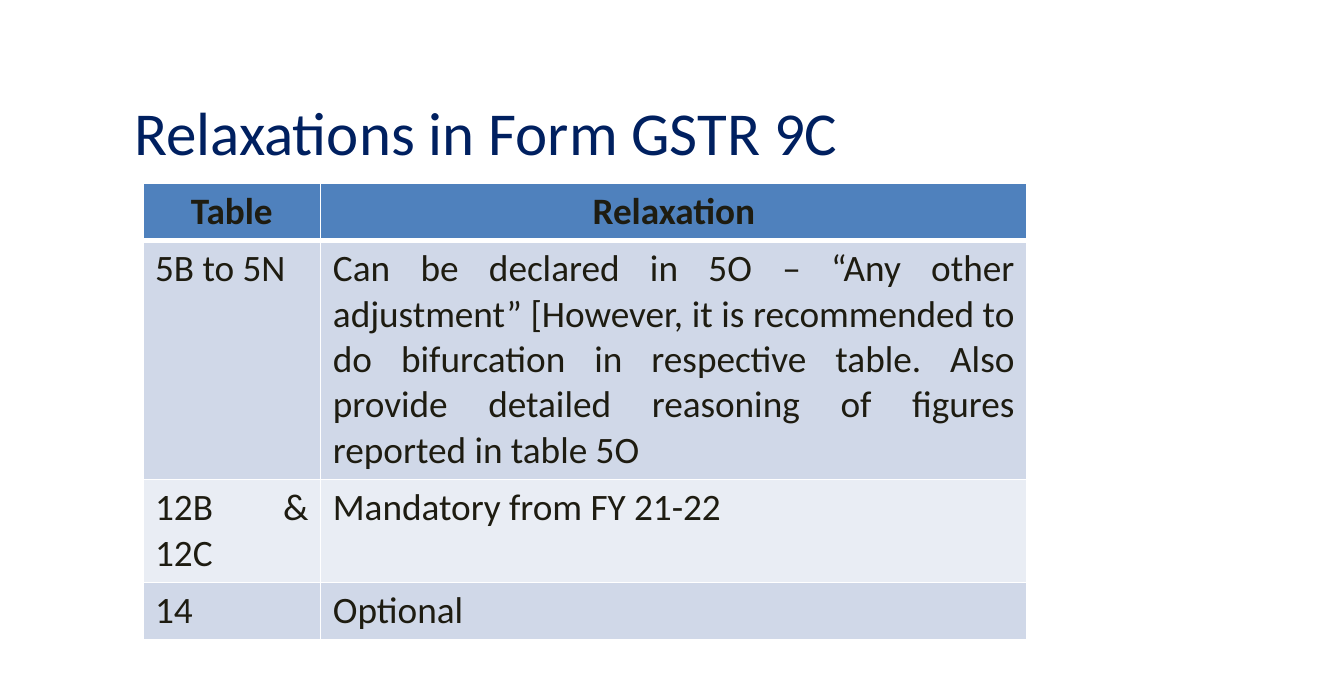
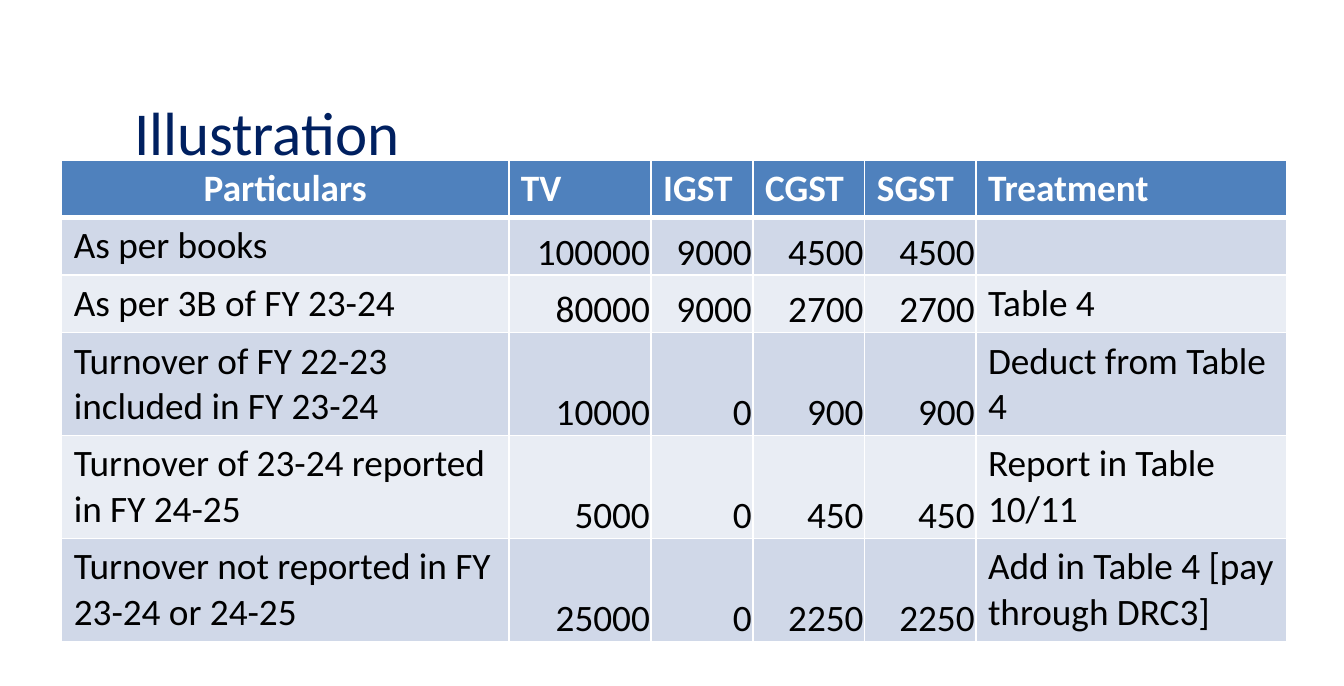
from lxml import etree
from pptx import Presentation
from pptx.dml.color import RGBColor
from pptx.enum import text
from pptx.oxml import ns
from pptx.util import Pt

FONT = "Calibri"
NAVY, WHITE, BLACK, INK = "002060", "FFFFFF", "000000", "1E1C11"
HEADER_FILL, BAND_FILLS = "4F81BD", ("D0D8E8", "E9EDF4")
TITLE_SIZE, TABLE_SIZE = 36, 22
LINE_HEIGHT, CELL_PADDING = 26.7, 7.2
THIN, THICK = 1, 3

LEFT, CENTER = text.PP_ALIGN.LEFT, text.PP_ALIGN.CENTER
RIGHT, JUSTIFY = text.PP_ALIGN.RIGHT, text.PP_ALIGN.JUSTIFY

SLIDES = [
    {
        "title": "Relaxations in Form GSTR 9C",
        "left": 84.4, "top": 108,
        "widths": [105, 417],
        "lines": [1, 5, 2, 1],
        "header_color": INK, "body_color": INK,
        "header_aligns": [CENTER, CENTER],
        "body_aligns": [JUSTIFY, JUSTIFY],
        "rows": [
            ("Table", "Relaxation"),
            ("5B to 5N", "Can be declared in 5O – “Any other adjustment” "
             "[However, it is recommended to do bifurcation in respective table. "
             "Also provide detailed reasoning of figures reported in table 5O"),
            ("12B & 12C", "Mandatory from FY 21-22"),
            ("14", "Optional"),
        ],
    },
    {
        "title": "Illustration",
        "left": 36.4, "top": 94.4,
        "widths": [264, 84, 60.2, 66, 65.6, 183.6],
        "lines": [1, 1, 1, 2, 2, 2],
        "header_color": WHITE, "body_color": BLACK,
        "header_aligns": [CENTER] + [LEFT] * 5,
        "body_aligns": [LEFT] + [RIGHT] * 4 + [LEFT],
        "rows": [
            ("Particulars", "TV", "IGST", "CGST", "SGST", "Treatment"),
            ("As per books", "100000", "9000", "4500", "4500", ""),
            ("As per 3B of FY 23-24", "80000", "9000", "2700", "2700", "Table 4"),
            ("Turnover of FY 22-23 included in FY 23-24",
             "10000", "0", "900", "900", "Deduct from Table 4"),
            ("Turnover of 23-24 reported in FY 24-25",
             "5000", "0", "450", "450", "Report in Table 10/11"),
            ("Turnover not reported in FY 23-24 or 24-25",
             "25000", "0", "2250", "2250", "Add in Table 4 [pay through DRC3]"),
        ],
    },
]


def rgb(color):
    return RGBColor.from_string(color)


def format_paragraph(paragraph, size, color, align, bold=False):
    paragraph.alignment = align
    for run in paragraph.runs:
        run.font.name = FONT
        run.font.size = Pt(size)
        run.font.bold = bold
        run.font.color.rgb = rgb(color)


def set_borders(cell, top, bottom):
    """Draw white borders; must run before the cell gets its fill."""
    properties = cell._tc.get_or_add_tcPr()
    for side, width in (("L", THIN), ("R", THIN), ("T", top), ("B", bottom)):
        line = etree.SubElement(properties, ns.qn(f"a:ln{side}"), w=str(Pt(width)))
        fill = etree.SubElement(line, ns.qn("a:solidFill"))
        etree.SubElement(fill, ns.qn("a:srgbClr"), val=WHITE)


def add_title(slide, wording):
    title = slide.shapes.title
    title.left, title.top, title.width, title.height = Pt(72), Pt(49), Pt(601), Pt(57)
    frame = title.text_frame
    frame.text = wording
    frame.word_wrap = True
    frame.auto_size = text.MSO_AUTO_SIZE.NONE
    frame.vertical_anchor = text.MSO_ANCHOR.MIDDLE
    format_paragraph(frame.paragraphs[0], TITLE_SIZE, NAVY, LEFT)


def fill_cell(cell, wording, row_index, align, color):
    is_header = row_index == 0
    set_borders(cell, THICK if row_index == 1 else THIN, THICK if is_header else THIN)
    cell.fill.solid()
    cell.fill.fore_color.rgb = rgb(
        HEADER_FILL if is_header else BAND_FILLS[(row_index - 1) % 2])
    if align == RIGHT:
        cell.vertical_anchor = text.MSO_ANCHOR.BOTTOM
        cell.margin_left = cell.margin_right = cell.margin_top = Pt(0.7)
        cell.margin_bottom = 0
    cell.text_frame.text = wording
    format_paragraph(cell.text_frame.paragraphs[0], TABLE_SIZE, color, align, is_header)


def add_table(slide, content):
    rows, widths = content["rows"], content["widths"]
    heights = [count * LINE_HEIGHT + CELL_PADDING for count in content["lines"]]
    table = slide.shapes.add_table(
        len(rows), len(widths), Pt(content["left"]), Pt(content["top"]),
        Pt(sum(widths)), Pt(sum(heights))).table
    for column, width in zip(table.columns, widths):
        column.width = Pt(width)
    for row_index, (row, height) in enumerate(zip(rows, heights)):
        table.rows[row_index].height = Pt(height)
        part = "body" if row_index else "header"
        for column_index, wording in enumerate(row):
            fill_cell(table.cell(row_index, column_index), wording, row_index,
                      content[f"{part}_aligns"][column_index], content[f"{part}_color"])


def main():
    presentation = Presentation()
    presentation.slide_width, presentation.slide_height = Pt(793.5), Pt(405)
    title_only = presentation.slide_layouts[5]
    for content in SLIDES:
        slide = presentation.slides.add_slide(title_only)
        add_title(slide, content["title"])
        add_table(slide, content)
    presentation.save("out.pptx")


if __name__ == "__main__":
    main()
